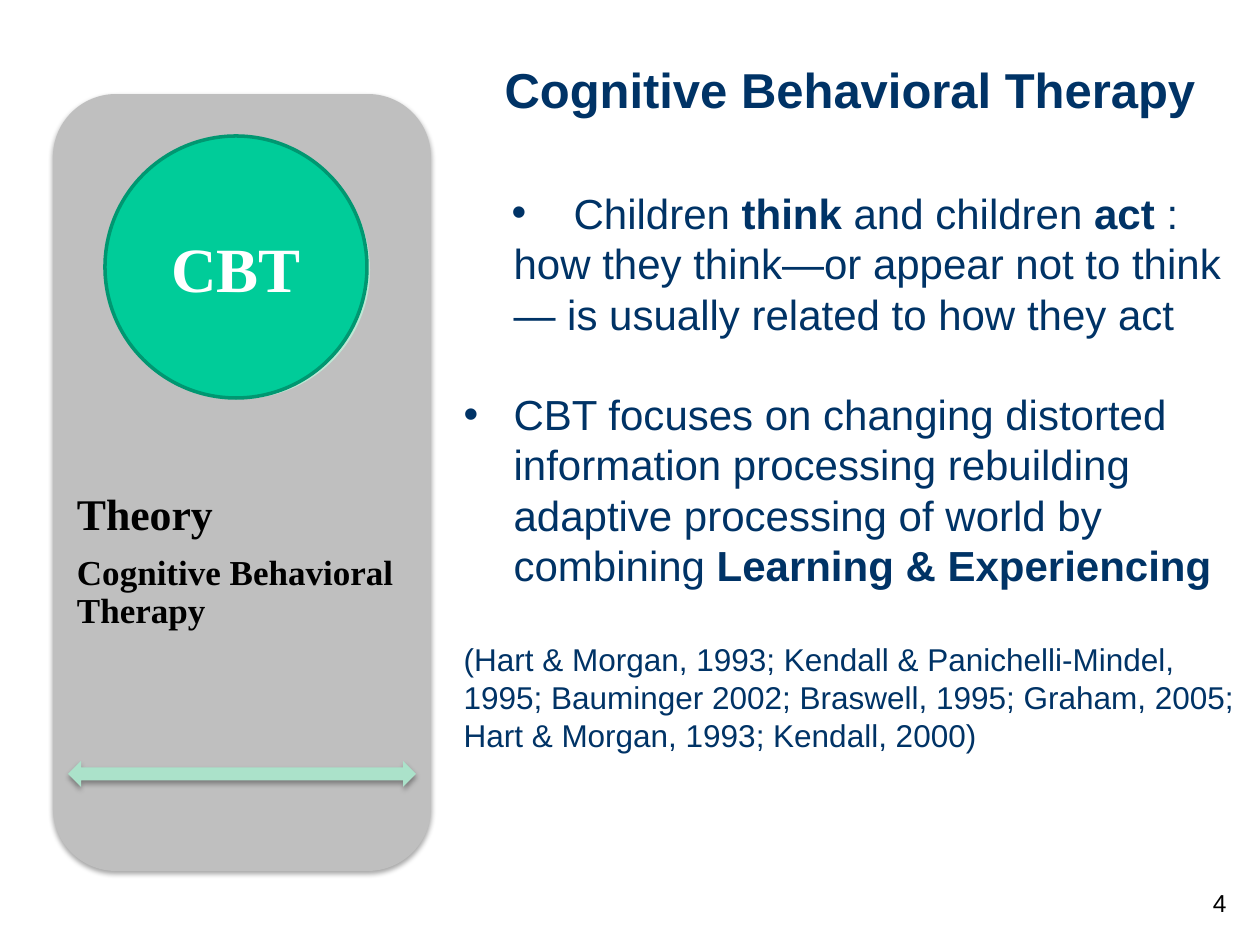
from dataclasses import dataclass
from typing import Optional

from lxml import etree
from pptx import Presentation
from pptx import util as u
from pptx.dml.color import RGBColor
from pptx.enum import shapes, text
from pptx.oxml.ns import qn

PX = 914400 / 126
NAVY = RGBColor(0x00, 0x33, 0x66)
BLACK = RGBColor(0x00, 0x00, 0x00)
WHITE = RGBColor(0xFF, 0xFF, 0xFF)
PANEL_GREY = RGBColor(0xBF, 0xBF, 0xBF)
PALE_GREEN = RGBColor(0xBD, 0xE7, 0xD4)
ARROW_GREEN = RGBColor(0xAB, 0xE2, 0xCA)
GREEN = RGBColor(0x00, 0xCC, 0x99)
DARK_GREEN = RGBColor(0x00, 0x97, 0x71)
SANS, SERIF = "Arial", "Times New Roman"


@dataclass(frozen=True)
class Box:
    left: int
    top: int
    width: int
    height: int

    def emu(self) -> list[int]:
        return [px(v) for v in (self.left, self.top, self.width, self.height)]


@dataclass(frozen=True)
class Figure:
    kind: shapes.MSO_SHAPE
    box: Box
    fill: RGBColor
    line: Optional[RGBColor] = None
    shadow: bool = False


@dataclass(frozen=True)
class Point:
    """A body paragraph; its runs alternate between regular and bold."""
    runs: tuple[str, ...]
    size: int = 24
    margin: int = 0
    hanging: int = 0
    gap: int = 0


PANEL = Figure(shapes.MSO_SHAPE.ROUNDED_RECTANGLE, Box(53, 94, 378, 777), PANEL_GREY, shadow=True)
DISC_BACK = Figure(shapes.MSO_SHAPE.OVAL, Box(112, 141, 258, 258), PALE_GREEN)
ARROW = Figure(shapes.MSO_SHAPE.LEFT_RIGHT_ARROW, Box(68, 761, 348, 26), ARROW_GREEN, shadow=True)
DISC = Figure(shapes.MSO_SHAPE.OVAL, Box(105, 136, 262, 262), GREEN, DARK_GREEN)

POINTS = (
    Point(("Children ", "think ", "and children ", "act ", ":"), margin=110, hanging=62),
    Point(("how they think—or appear not to think— is usually related to how they act",), margin=50),
    Point(("CBT focuses on changing distorted information processing rebuilding adaptive "
           "processing of world by combining ", "Learning & Experiencing"),
          margin=50, hanging=50, gap=50),
    Point(("(Hart & Morgan, 1993; Kendall & Panichelli-Mindel, 1995; Bauminger 2002; "
           "Braswell, 1995; Graham, 2005; Hart & Morgan, 1993; Kendall, 2000)",), size=18, gap=50),
)


def px(value: int) -> int:
    return round(value * PX)


def style(font, name: str, size: int, color: RGBColor, bold: bool = False) -> None:
    font.name, font.size, font.bold = name, u.Pt(size), bold
    font.color.rgb = color


def place(shape, box: Box) -> None:
    shape.left, shape.top, shape.width, shape.height = box.emu()


def add_shadow(shape) -> None:
    effects = shape._element.spPr.find(qn("a:effectLst"))
    outer = etree.SubElement(effects, qn("a:outerShdw"), blurRad=str(u.Pt(3.1)),
                             dist=str(u.Pt(1.8)), dir="5400000", rotWithShape="0")
    color = etree.SubElement(outer, qn("a:srgbClr"), val="000000")
    etree.SubElement(color, qn("a:alpha"), val="35000")


def draw(slide, figure: Figure):
    shape = slide.shapes.add_shape(figure.kind, *figure.box.emu())
    shape.shadow.inherit = False
    shape.fill.solid()
    shape.fill.fore_color.rgb = figure.fill
    if figure.line is None:
        shape.line.fill.background()
    else:
        shape.line.color.rgb = figure.line
        shape.line.width = u.Pt(2)
    if figure.shadow:
        add_shadow(shape)
    return shape


def add_caption(slide) -> None:
    frame = slide.shapes.add_textbox(*Box(53, 406, 378, 311).emu()).text_frame
    frame.word_wrap = True
    frame.vertical_anchor = text.MSO_ANCHOR.MIDDLE
    frame.margin_left = frame.margin_right = frame.margin_top = frame.margin_bottom = px(24)
    frame.text = "Theory\nCognitive Behavioral Therapy"
    for paragraph, size in zip(frame.paragraphs, (25, 20)):
        paragraph.line_spacing = 0.9
        paragraph.space_after = u.Pt(size * 0.35)
        style(paragraph.runs[0].font, SERIF, size, BLACK, bold=True)


def add_heading(slide) -> None:
    heading = slide.shapes.title
    place(heading, Box(492, 53, 768, 72))
    frame = heading.text_frame
    frame.text = "Cognitive Behavioral Therapy"
    frame.auto_size = text.MSO_AUTO_SIZE.NONE
    frame.vertical_anchor = text.MSO_ANCHOR.TOP
    frame.paragraphs[0].alignment = text.PP_ALIGN.LEFT
    style(frame.paragraphs[0].runs[0].font, SANS, 28, NAVY, bold=True)


def write_point(paragraph, point: Point) -> None:
    paragraph.space_before = u.Pt(round(point.gap * PX / 12700, 1))
    props = paragraph._p.get_or_add_pPr()
    props.set("marL", str(px(point.margin)))
    props.set("indent", str(-px(point.hanging)))
    if point.hanging:
        etree.SubElement(props, qn("a:buFont"), typeface=SANS)
        etree.SubElement(props, qn("a:buChar"), char="•")
    else:
        etree.SubElement(props, qn("a:buNone"))
    for index, words in enumerate(point.runs):
        run = paragraph.add_run()
        run.text = words
        style(run.font, SANS, point.size, NAVY, bold=index % 2 == 1)


def add_points(slide) -> None:
    body = slide.placeholders[1]
    place(body, Box(451, 181, 809, 680))
    frame = body.text_frame
    frame.auto_size = text.MSO_AUTO_SIZE.NONE
    for index, point in enumerate(POINTS):
        write_point(frame.add_paragraph() if index else frame.paragraphs[0], point)


def add_disc_label(disc) -> None:
    frame = disc.text_frame
    frame.text = "CBT"
    frame.vertical_anchor = text.MSO_ANCHOR.MIDDLE
    frame.paragraphs[0].alignment = text.PP_ALIGN.CENTER
    style(frame.paragraphs[0].runs[0].font, SERIF, 36, WHITE, bold=True)


def add_page_number(slide) -> None:
    frame = slide.shapes.add_textbox(*Box(977, 882, 262, 63).emu()).text_frame
    frame.word_wrap = True
    frame.text = "4"
    frame.paragraphs[0].alignment = text.PP_ALIGN.RIGHT
    style(frame.paragraphs[0].runs[0].font, SANS, 14, BLACK)


def main() -> None:
    deck = Presentation()
    deck.slide_width, deck.slide_height = u.Inches(10), u.Inches(7.5)
    slide = deck.slides.add_slide(deck.slide_layouts[1])
    add_page_number(slide)
    draw(slide, PANEL)
    add_caption(slide)
    draw(slide, DISC_BACK)
    draw(slide, ARROW)
    add_heading(slide)
    add_points(slide)
    add_disc_label(draw(slide, DISC))
    deck.save("out.pptx")


if __name__ == "__main__":
    main()
